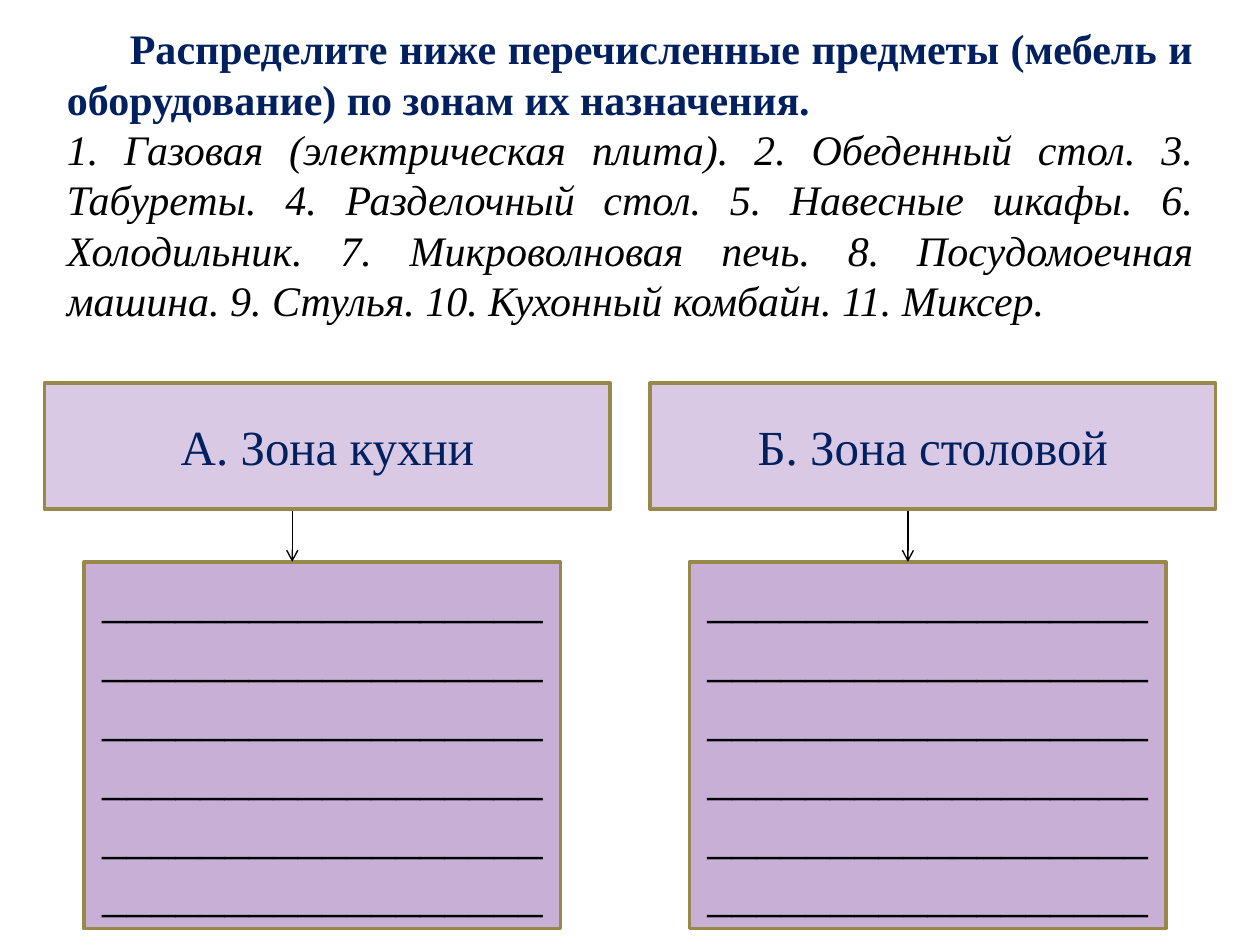
import pptx
import pptx.util
import pptx.dml.color
import pptx.enum.shapes
import pptx.enum.text
from dataclasses import dataclass
from lxml import etree

Pt = pptx.util.Pt
RGB = pptx.dml.color.RGBColor.from_string
ALIGN = pptx.enum.text.PP_ALIGN
ANCHOR = pptx.enum.text.MSO_ANCHOR


@dataclass(frozen=True)
class Theme:
    font: str = "Times New Roman"
    ink: str = "000000"
    navy: str = "002060"
    header_fill: str = "DAC9E4"
    answer_fill: str = "C8AFD6"
    border: str = "98894B"
    task_size: int = 24
    zone_size: int = 28
    border_width: float = 2
    arrow_width: float = 0.79


THEME = Theme()
TASK = "Распределите ниже перечисленные предметы (мебель и оборудование) по зонам их назначения. "
ITEMS = [
    "Газовая (электрическая плита)", "Обеденный стол", "Табуреты",
    "Разделочный стол", "Навесные шкафы", "Холодильник", "Микроволновая печь",
    "Посудомоечная машина", "Стулья", "Кухонный комбайн", "Миксер",
]
ZONES = [("А. Зона кухни", 167), ("Б. Зона столовой", 518.8)]  # name, arrow x
ZONE_STEP = 345.9
ANSWER_LINES, LINE_LENGTH = 6, 18


def set_format(target, values):
    for name, value in values.items():
        setattr(target, name, value)


def add_span(para, text, size, color, **extra):
    span = para.add_run()
    span.text = text
    set_format(span.font, {"name": THEME.font, "size": Pt(size), **extra})
    span.font.color.rgb = RGB(color)


def add_task(page):
    """Fill the title placeholder with the task and the numbered items."""
    box = page.shapes.title
    set_format(box, {"left": Pt(31), "top": Pt(9.4), "width": Pt(658), "height": Pt(181.4)})
    frame = box.text_frame
    set_format(frame, {"word_wrap": True, "vertical_anchor": ANCHOR.TOP,
                       "auto_size": pptx.enum.text.MSO_AUTO_SIZE.NONE})
    heading, items = frame.paragraphs[0], frame.add_paragraph()
    heading.alignment = items.alignment = ALIGN.JUSTIFY
    add_span(heading, "\t", THEME.task_size, THEME.ink, bold=True)
    add_span(heading, TASK, THEME.task_size, THEME.navy, bold=True)
    numbered = " ".join(f"{number}. {item}." for number, item in enumerate(ITEMS, 1))
    add_span(items, numbered, THEME.task_size, THEME.ink, bold=False, italic=True)


def add_panel(page, left, top, width, height, fill, text, color):
    box = page.shapes.add_shape(pptx.enum.shapes.MSO_SHAPE.RECTANGLE,
                                Pt(left), Pt(top), Pt(width), Pt(height))
    box.shadow.inherit = False
    box.fill.solid()
    box.fill.fore_color.rgb = RGB(fill)
    box.line.color.rgb = RGB(THEME.border)
    box.line.width = Pt(THEME.border_width)
    set_format(box.text_frame, {"word_wrap": True, "vertical_anchor": ANCHOR.MIDDLE})
    para = box.text_frame.paragraphs[0]
    para.alignment = ALIGN.CENTER
    add_span(para, text, THEME.zone_size, color)


def add_down_arrow(page, x, top, bottom):
    arrow = page.shapes.add_connector(pptx.enum.shapes.MSO_CONNECTOR.STRAIGHT,
                                      Pt(x), Pt(top), Pt(x), Pt(bottom))
    arrow.line.color.rgb = RGB(THEME.ink)
    arrow.line.width = Pt(THEME.arrow_width)
    namespace = pptx.oxml.ns.qn
    etree.SubElement(arrow.line._get_or_add_ln(), namespace("a:tailEnd"), type="arrow")
    etree.SubElement(arrow._element.spPr, namespace("a:effectLst"))


def main():
    deck = pptx.Presentation()
    set_format(deck, {"slide_width": Pt(720), "slide_height": Pt(540)})
    page = deck.slides.add_slide(deck.slide_layouts[5])
    add_task(page)
    blanks = "_" * (ANSWER_LINES * LINE_LENGTH)
    for index, (name, arrow_x) in enumerate(ZONES):
        shift = index * ZONE_STEP
        add_panel(page, 25.4 + shift, 218.9, 323.3, 72, THEME.header_fill, name, THEME.navy)
        add_panel(page, 48.1 + shift, 321.1, 272.2, 209.5, THEME.answer_fill, blanks, THEME.ink)
        add_down_arrow(page, arrow_x, 292.3, 321.1)
    deck.save("out.pptx")


if __name__ == "__main__":
    main()
